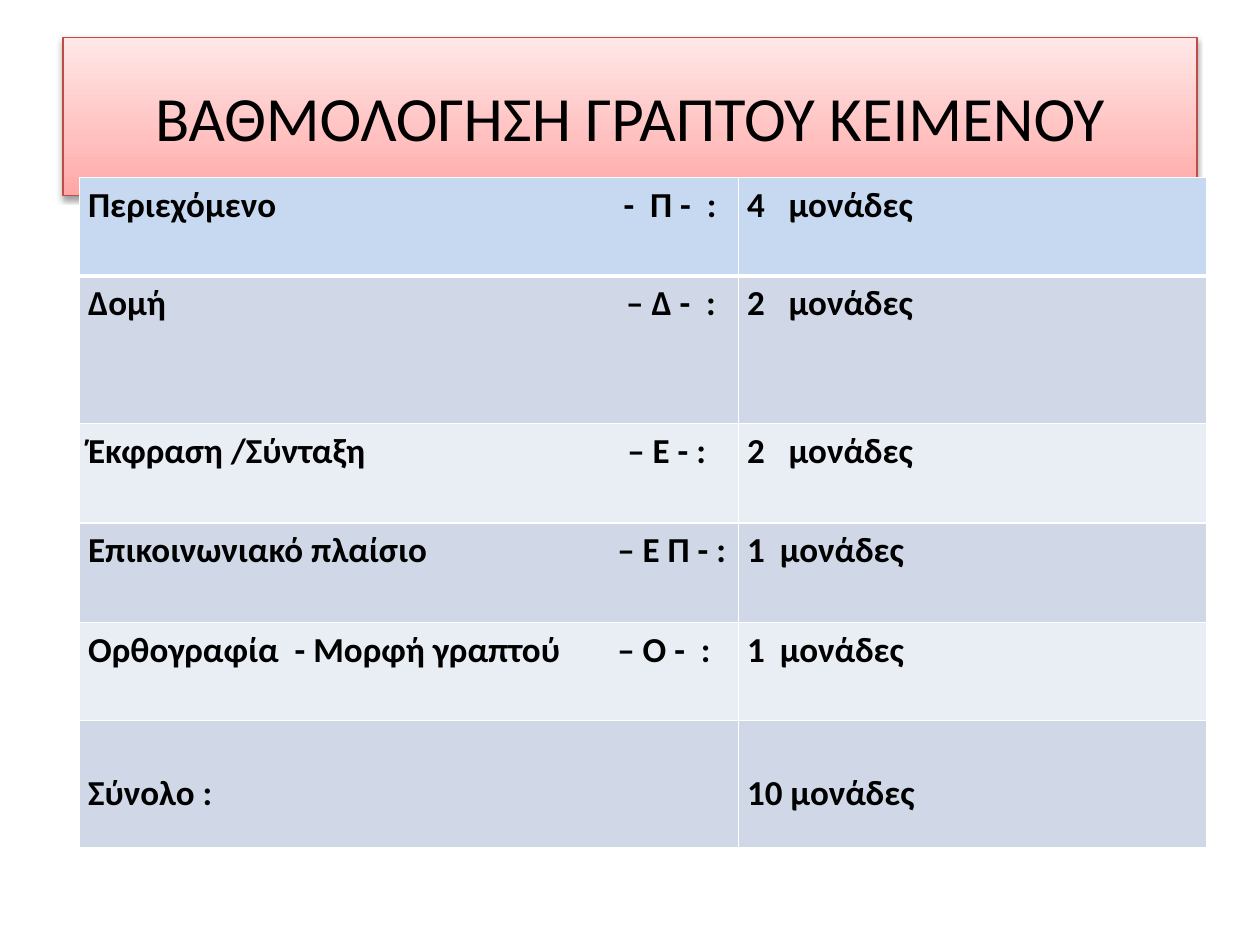
from pptx import Presentation
from pptx.dml.color import RGBColor
from pptx.enum.shapes import MSO_SHAPE as SHAPE
from pptx.enum.text import MSO_ANCHOR as ANCHOR, PP_ALIGN as ALIGN
from pptx.oxml import parse_xml
from pptx.oxml.ns import nsdecls
from pptx.util import Inches, Pt

# Content: row height, then (text, tab stop) for each cell
TITLE = "ΒΑΘΜΟΛΟΓΗΣΗ ΓΡΑΠΤΟΥ ΚΕΙΜΕΝΟΥ"
ROWS = [
    (0.78, ("Περιεχόμενο\t-  Π -  :", 4.25), ("4\tμονάδες", 0.33)),
    (1.17, ("Δομή\t– Δ -  :", 4.27), ("2\tμονάδες", 0.33)),
    (0.79, ("Έκφραση /Σύνταξη\t– Ε - :", 4.28), ("2\tμονάδες", 0.33)),
    (0.79, ("Επικοινωνιακό πλαίσιο\t– Ε Π - :", 4.2), ("1\tμονάδες", 0.26)),
    (0.78, ("Ορθογραφία  - Μορφή γραπτού\t– Ο -  :", 4.2), ("1\tμονάδες", 0.26)),
    (1.01, ("Σύνολο :", None), ("10 μονάδες", None)),
]
COL_WIDTHS = [5.23, 3.72]
HEADER, BANDS = "C6D9F1", ["E9EDF4", "D0D8E8"]
GRADIENT = [(0, "FFA6A5"), (35, "FFC0BF"), (100, "FFE7E7")]


def rgb(color):
    return RGBColor.from_string(color)


def write(tf, text, size=20, bold=False, align=ALIGN.LEFT, spacing=None, tab=None):
    p = tf.paragraphs[0]
    p.alignment = align
    if spacing:
        p.line_spacing = spacing
    if tab:
        p._p.get_or_add_pPr().append(parse_xml(
            f'<a:tabLst {nsdecls("a")}><a:tab pos="{Inches(tab)}" algn="l"/></a:tabLst>'))
    r = p.add_run()
    r.text = text
    r.font.name, r.font.size, r.font.bold = "Calibri", Pt(size), bold
    r.font.color.rgb = rgb("000000")


def add_border(cell, side, width, color="FFFFFF"):
    cell._tc.get_or_add_tcPr().append(parse_xml(
        f'<a:ln{side} {nsdecls("a")} w="{Pt(width)}"><a:solidFill>'
        f'<a:srgbClr val="{color}"/></a:solidFill></a:ln{side}>'))


def add_gradient(sp, stops):
    gs = "".join(f'<a:gs pos="{pos * 1000}"><a:srgbClr val="{c}"/></a:gs>'
                 for pos, c in stops)
    sp.line._get_or_add_ln().addprevious(parse_xml(
        f'<a:gradFill {nsdecls("a")} rotWithShape="1"><a:gsLst>{gs}</a:gsLst>'
        '<a:lin ang="16200000" scaled="0"/></a:gradFill>'))


def add_shadow(sp):
    sp.shadow.inherit = False
    effects = sp._element.spPr[-1]
    effects.append(parse_xml(
        f'<a:outerShdw {nsdecls("a")} blurRad="{Pt(3.1)}" dist="{Pt(1.6)}" '
        'dir="5400000" rotWithShape="0"><a:srgbClr val="000000">'
        '<a:alpha val="38000"/></a:srgbClr></a:outerShdw>'))


prs = Presentation()
prs.slide_width, prs.slide_height = Inches(10), Inches(7.5)
s = prs.slides.add_slide(prs.slide_layouts[6])

# Title bar
sp = s.shapes.add_shape(SHAPE.RECTANGLE, Inches(0.5), Inches(0.3), Inches(9), Inches(1.25))
sp.line.color.rgb, sp.line.width = rgb("BF4C48"), Pt(0.75)
add_gradient(sp, GRADIENT)
add_shadow(sp)
sp.text_frame.word_wrap = True
sp.text_frame.vertical_anchor = ANCHOR.MIDDLE
write(sp.text_frame, TITLE, size=36, align=ALIGN.CENTER)

# Marks table
total_height = sum(height for height, *_ in ROWS)
table = s.shapes.add_table(len(ROWS), 2, Inches(0.63), Inches(1.41),
                           Inches(sum(COL_WIDTHS)), Inches(total_height)).table
for col, width in zip(table.columns, COL_WIDTHS):
    col.width = Inches(width)
for i, (height, *cells) in enumerate(ROWS):
    table.rows[i].height = Inches(height)
    is_total = i == len(ROWS) - 1
    for j, (text, tab) in enumerate(cells):
        cell = table.cell(i, j)
        cell.margin_left = cell.margin_right = Inches(0.07)
        cell.margin_top = Inches(0.36 if is_total else 0)
        cell.margin_bottom = 0
        for side in "LRTB":
            thick = (i, side) in [(0, "B"), (1, "T")]
            add_border(cell, side, 3 if thick else 1)
        cell.fill.solid()
        cell.fill.fore_color.rgb = rgb(BANDS[i % 2] if i else HEADER)
        write(cell.text_frame, text, bold=True, spacing=1.15, tab=tab)

prs.save("out.pptx")
